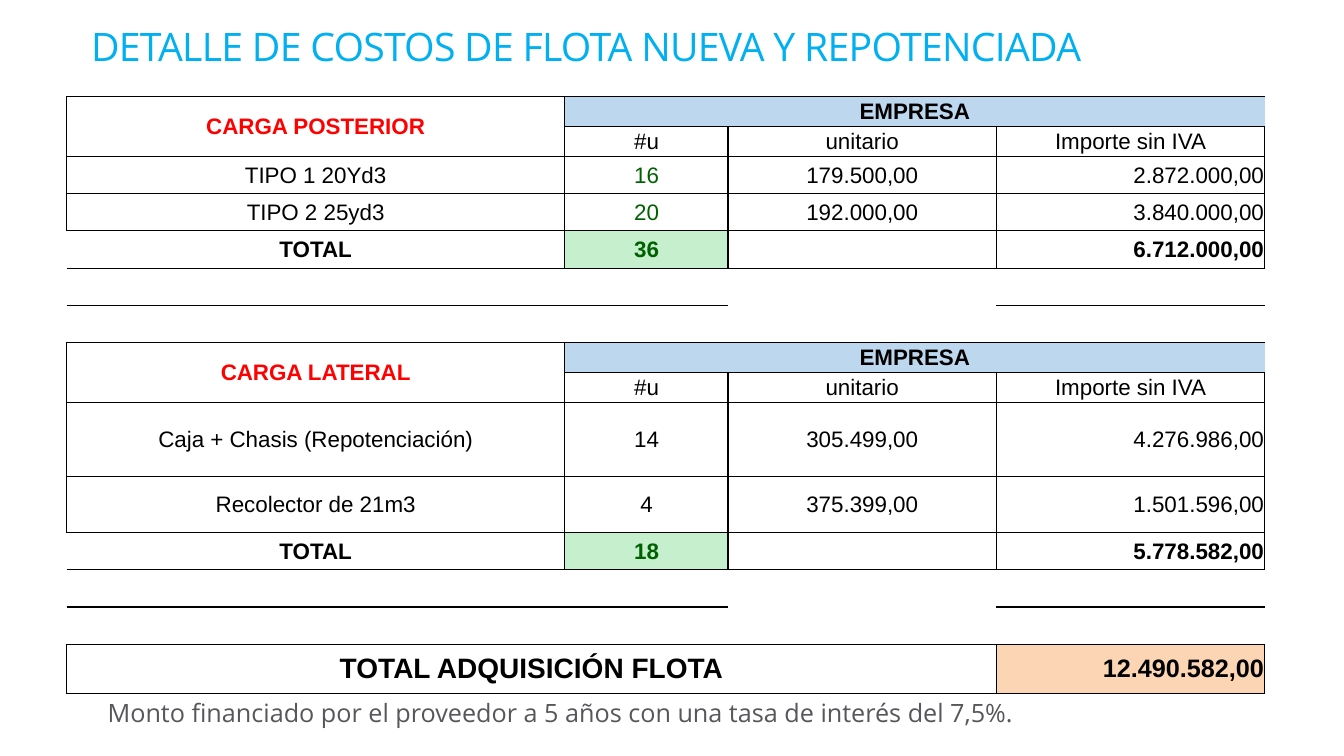
from lxml import etree
from pptx import Presentation
from pptx.dml.color import RGBColor
from pptx.enum import text as t
from pptx.oxml import ns
from pptx.util import Pt

COLORS = {"title": "00B0F0", "note": "57565A", "heading": "FF0000", "ink": "000000",
          "count": "006100", "supplier": "BDD7EE", "subtotal": "C6EFCE", "total": "FCD5B4"}
ALIGN = {"l": t.PP_ALIGN.LEFT, "c": t.PP_ALIGN.CENTER, "r": t.PP_ALIGN.RIGHT}
NO_GRID_STYLE = "{2D5ABB26-0587-4C30-8999-92F81FD0307C}"
COLUMNS = [356, 116.6, 191.6, 191.8]
HEAD, LINE = 21.4, 26.6
ALL = "LRTB"


def write(frame, wording, size=16, color="ink", bold=False, font="Arial", align="c",
          spacing=None, tracking=None):
    paragraph = frame.paragraphs[0]
    paragraph.alignment = ALIGN[align]
    if spacing:
        paragraph.line_spacing = spacing
    run = paragraph.add_run()
    run.text = wording
    run.font.size, run.font.bold, run.font.name = Pt(size), bold, font
    run.font.color.rgb = RGBColor.from_string(COLORS[color])
    if tracking:
        run.font._element.set("spc", str(round(tracking * 100)))


def text_box(slide, box, wording, anchor=t.MSO_ANCHOR.TOP, inset=None, **form):
    frame = slide.shapes.add_textbox(*map(Pt, box)).text_frame
    frame.word_wrap = True
    frame.vertical_anchor = anchor
    if inset is not None:
        frame.margin_left = frame.margin_right = Pt(inset)
        frame.margin_top = frame.margin_bottom = Pt(inset)
    write(frame, wording, **form)


def style_cell(cell, wording="", borders=ALL, fill=None, **form):
    cell.margin_left = cell.margin_right = cell.margin_top = Pt(0.7)
    cell.margin_bottom = Pt(0)
    cell.vertical_anchor = t.MSO_ANCHOR.MIDDLE
    if fill:
        cell.fill.solid()
        cell.fill.fore_color.rgb = RGBColor.from_string(COLORS[fill])
    else:
        cell.fill.background()
    properties = cell._tc.get_or_add_tcPr()
    sides = [side for side in ALL if side in borders]
    for place, side in enumerate(sides):
        line = etree.Element(ns.qn("a:ln" + side), w=str(Pt(1)))
        solid = etree.SubElement(line, ns.qn("a:solidFill"))
        etree.SubElement(solid, ns.qn("a:srgbClr"), val=COLORS["ink"])
        properties.insert(place, line)
    write(cell.text_frame, wording, **form)


def fleet_section(table, top, heading, items, total, count_color):
    """Fill a block of rows: two header rows, the items and their total."""
    def cell(row, column):
        return table.cell(top + row, column)

    # Headers
    cell(0, 0).merge(cell(1, 0))
    cell(0, 1).merge(cell(0, 3))
    style_cell(cell(0, 0), heading, color="heading", bold=True)
    style_cell(cell(1, 0), borders="LR")
    style_cell(cell(0, 1), "EMPRESA", borders="LTB", fill="supplier", bold=True)
    for column in (2, 3):
        style_cell(cell(0, column), borders="TB")
    for column, label in enumerate(["#u", "unitario", "Importe sin IVA"], 1):
        style_cell(cell(1, column), label)

    # Items
    for row, values in enumerate(items, 2):
        for column, value in enumerate(values):
            style_cell(cell(row, column), value, align="r" if column == 3 else "c",
                       color=count_color if column == 1 else "ink")

    # Total
    last = 2 + len(items)
    units, amount = total
    style_cell(cell(last, 0), "TOTAL", borders="RTB", bold=True)
    style_cell(cell(last, 1), units, fill="subtotal", color="count", bold=True)
    style_cell(cell(last, 2), borders="LRT")
    style_cell(cell(last, 3), amount, bold=True, align="r")

    # Two spacer rows
    for column in range(4):
        style_cell(cell(last + 1, column), borders="" if column == 2 else "T")
        style_cell(cell(last + 2, column), borders="B")


def grand_total(table, row, label, amount):
    table.cell(row, 0).merge(table.cell(row, 2))
    style_cell(table.cell(row, 0), label, size=20, bold=True)
    for column in (1, 2):
        style_cell(table.cell(row, column), borders="TB")
    style_cell(table.cell(row, 3), amount, size=18, bold=True, align="r", fill="total")


def cost_table(slide, left, top):
    heights = [HEAD] * 2 + [LINE] * 5 + [HEAD] * 2 + [53, 40] + [LINE] * 3 + [35]
    table = slide.shapes.add_table(len(heights), len(COLUMNS), Pt(left), Pt(top),
                                   Pt(sum(COLUMNS)), Pt(sum(heights))).table
    table.first_row = table.horz_banding = False
    table._tbl.tblPr.find(ns.qn("a:tableStyleId")).text = NO_GRID_STYLE
    for column, width in zip(table.columns, COLUMNS):
        column.width = Pt(width)
    for row, height in zip(table.rows, heights):
        row.height = Pt(height)

    fleet_section(table, 0, "CARGA POSTERIOR",
                  [("TIPO 1 20Yd3", "16", "179.500,00", "2.872.000,00"),
                   ("TIPO 2 25yd3", "20", "192.000,00", "3.840.000,00")],
                  ("36", "6.712.000,00"), "count")
    fleet_section(table, 7, "CARGA LATERAL",
                  [("Caja + Chasis (Repotenciación)", "14", "305.499,00", "4.276.986,00"),
                   ("Recolector de 21m3", "4", "375.399,00", "1.501.596,00")],
                  ("18", "5.778.582,00"), "ink")
    grand_total(table, 14, "TOTAL ADQUISICIÓN FLOTA", "12.490.582,00")


def cost_slide(deck):
    slide = deck.slides.add_slide(deck.slide_layouts[6])
    text_box(slide, (10.5, 3, 816, 64), "DETALLE DE COSTOS DE FLOTA NUEVA Y REPOTENCIADA",
             anchor=t.MSO_ANCHOR.MIDDLE, inset=0, size=28, color="title",
             font="Open Sans", spacing=0.86, tracking=-0.5)
    cost_table(slide, 47.5, 69)
    text_box(slide, (69.8, 494.6, 808, 29),
             "Monto financiado por el proveedor a 5 años con una tasa de interés del 7,5%.",
             size=18, color="note", font="Open Sans", align="l")


def main():
    deck = Presentation()
    deck.slide_width, deck.slide_height = Pt(960), Pt(540)
    cost_slide(deck)
    deck.save("out.pptx")


if __name__ == "__main__":
    main()
